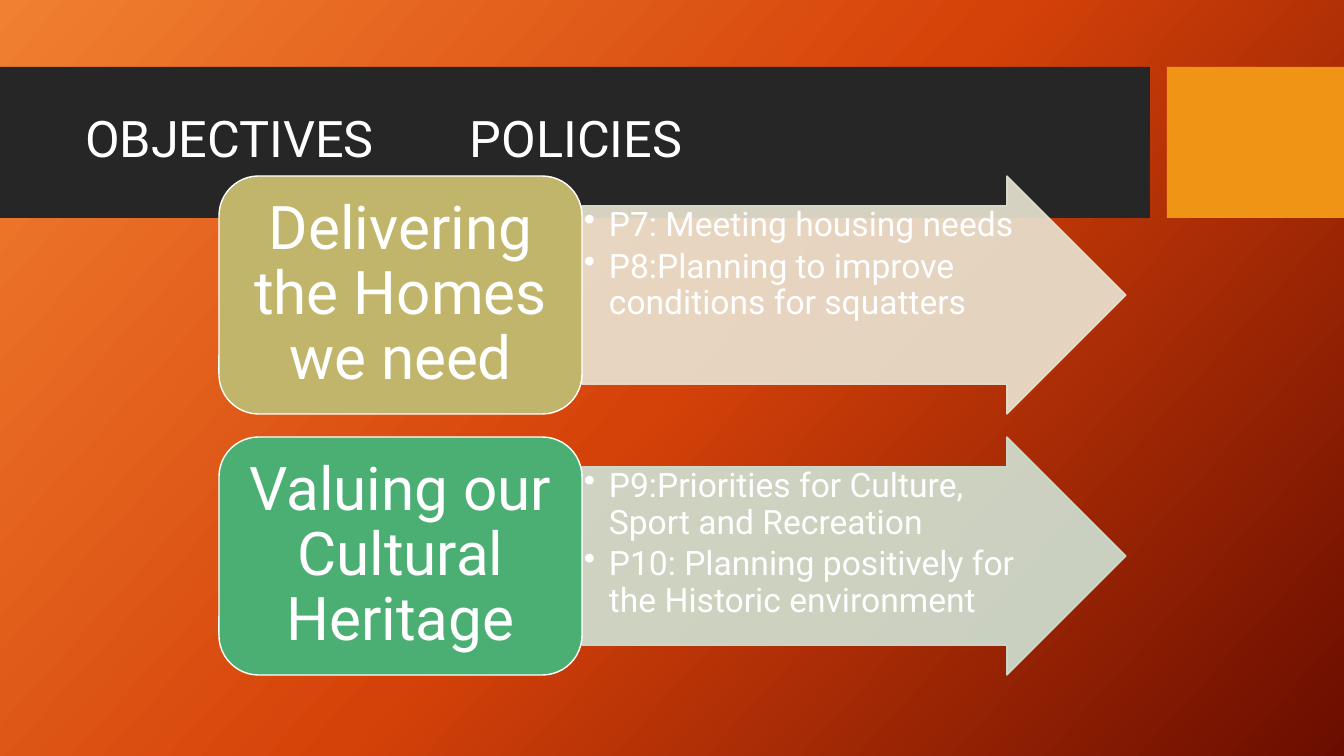
from copy import deepcopy

from lxml.etree import SubElement
from pptx import Presentation
from pptx.dml.color import RGBColor
from pptx.enum.shapes import MSO_SHAPE
from pptx.enum.text import MSO_ANCHOR, PP_ALIGN
from pptx.oxml.ns import qn
from pptx.util import Pt

HEADINGS = ["OBJECTIVES", "POLICIES"]
OBJECTIVES = [
    {
        "label": "Delivering the Homes we need",
        "policies": [
            "P7: Meeting housing needs",
            "P8:Planning to improve conditions for squatters",
        ],
        "label_fill": "C1B56B",
        "arrow_fill": "E9E5D4",
    },
    {
        "label": "Valuing our Cultural Heritage",
        "policies": [
            "P9:Priorities for Culture, Sport and Recreation",
            "P10: Planning positively for the Historic environment",
        ],
        "label_fill": "4BAF73",
        "arrow_fill": "D0E3D5",
    },
]

THEME = {
    "font": "Roboto",
    "text": "FFFFFF",
    "band": "262626",
    "accent": "F09415",
    "background": [(0, "F18031"), (0.5, "D54209"), (1, "6A0D00")],
    "title_size": 36,
    "label_size": 43,
    "policy_size": 24,
}

EMU_PER_PX = 914400 / 100.8
SLIDE_WIDTH, SLIDE_HEIGHT = 1344, 756
BAND_TOP, BAND_HEIGHT, BAND_WIDTH = 67, 151, 1150
ACCENT_LEFT = 1167
ROW_TOP, ROW_HEIGHT, ROW_PITCH = 176, 238, 261
LABEL_LEFT, LABEL_WIDTH, ARROW_WIDTH = 219, 363, 544
POLICY_TAB, POLICY_INDENT = 385, 25


def px(length):
    return round(length * EMU_PER_PX)


def set_values(target, values):
    for name, value in values.items():
        setattr(target, name, value)


def add_block(slide, kind, box, fill, line=None):
    shape = slide.shapes.add_shape(kind, *map(px, box))
    shape.shadow.inherit = False
    shape.fill.solid()
    shape.fill.fore_color.rgb = RGBColor.from_string(fill)
    if line:
        shape.line.color.rgb = RGBColor.from_string(line)
        shape.line.width = Pt(1)
    else:
        shape.line.fill.background()
    return shape


def set_frame(frame, anchor, horizontal, vertical):
    set_values(frame, {
        "word_wrap": True,
        "vertical_anchor": anchor,
        "margin_left": px(horizontal),
        "margin_right": px(horizontal),
        "margin_top": px(vertical),
        "margin_bottom": px(vertical),
    })


def style_paragraph(paragraph, size, alignment=PP_ALIGN.LEFT):
    set_values(paragraph, {"alignment": alignment, "line_spacing": 0.9})
    set_values(paragraph.font, {"name": THEME["font"], "size": Pt(size)})
    paragraph.font.color.rgb = RGBColor.from_string(THEME["text"])


def set_background(slide):
    fill = slide.background.fill
    fill.gradient()
    fill.gradient_angle = 360 - 42
    stop_list = next(slide.element.iter(qn("a:gsLst")))
    stop_list.append(deepcopy(stop_list[-1]))
    for stop, (position, color) in zip(fill.gradient_stops, THEME["background"]):
        stop.position = position
        stop.color.rgb = RGBColor.from_string(color)


def add_title(slide):
    box = slide.shapes.add_textbox(*map(px, (75, 82, 1059, 119)))
    set_frame(box.text_frame, MSO_ANCHOR.MIDDLE, 10, 5)
    paragraph = box.text_frame.paragraphs[0]
    paragraph.text = "\t".join(HEADINGS)
    tabs = SubElement(paragraph._p.get_or_add_pPr(), qn("a:tabLst"))
    SubElement(tabs, qn("a:tab"), pos=str(px(POLICY_TAB)), algn="l")
    style_paragraph(paragraph, THEME["title_size"])


def add_policies(slide, objective, top):
    color = objective["arrow_fill"]
    box = (LABEL_LEFT + LABEL_WIDTH, top, ARROW_WIDTH, ROW_HEIGHT)
    arrow = add_block(slide, MSO_SHAPE.RIGHT_ARROW, box, color, color)
    arrow.adjustments[0] = 0.75
    arrow.adjustments[1] = 0.5
    for color_element in arrow._element.spPr.iter(qn("a:srgbClr")):
        SubElement(color_element, qn("a:alpha"), val="90000")
    frame = arrow.text_frame
    set_frame(frame, MSO_ANCHOR.TOP, 2, 2)
    frame.text = "\n".join(objective["policies"])
    for paragraph in frame.paragraphs:
        properties = paragraph._p.get_or_add_pPr()
        properties.set("marL", str(px(POLICY_INDENT)))
        properties.set("indent", str(-px(POLICY_INDENT)))
        SubElement(properties, qn("a:buChar"), char="•")
        style_paragraph(paragraph, THEME["policy_size"])
        paragraph.space_after = Pt(4)


def add_label(slide, objective, top):
    box = (LABEL_LEFT, top, LABEL_WIDTH, ROW_HEIGHT)
    label = add_block(slide, MSO_SHAPE.ROUNDED_RECTANGLE, box,
                      objective["label_fill"], THEME["text"])
    set_frame(label.text_frame, MSO_ANCHOR.MIDDLE, 16, 9)
    label.text_frame.text = objective["label"]
    style_paragraph(label.text_frame.paragraphs[0], THEME["label_size"], PP_ALIGN.CENTER)


def main():
    presentation = Presentation()
    set_values(presentation, {"slide_width": px(SLIDE_WIDTH), "slide_height": px(SLIDE_HEIGHT)})
    slide = presentation.slides.add_slide(presentation.slide_layouts[6])
    set_background(slide)
    for left, width, color in [
        (0, BAND_WIDTH, THEME["band"]),
        (ACCENT_LEFT, SLIDE_WIDTH - ACCENT_LEFT, THEME["accent"]),
    ]:
        add_block(slide, MSO_SHAPE.RECTANGLE, (left, BAND_TOP, width, BAND_HEIGHT), color)
    add_title(slide)
    for row, objective in enumerate(OBJECTIVES):
        top = ROW_TOP + row * ROW_PITCH
        add_policies(slide, objective, top)
        add_label(slide, objective, top)
    presentation.save("out.pptx")


if __name__ == "__main__":
    main()
